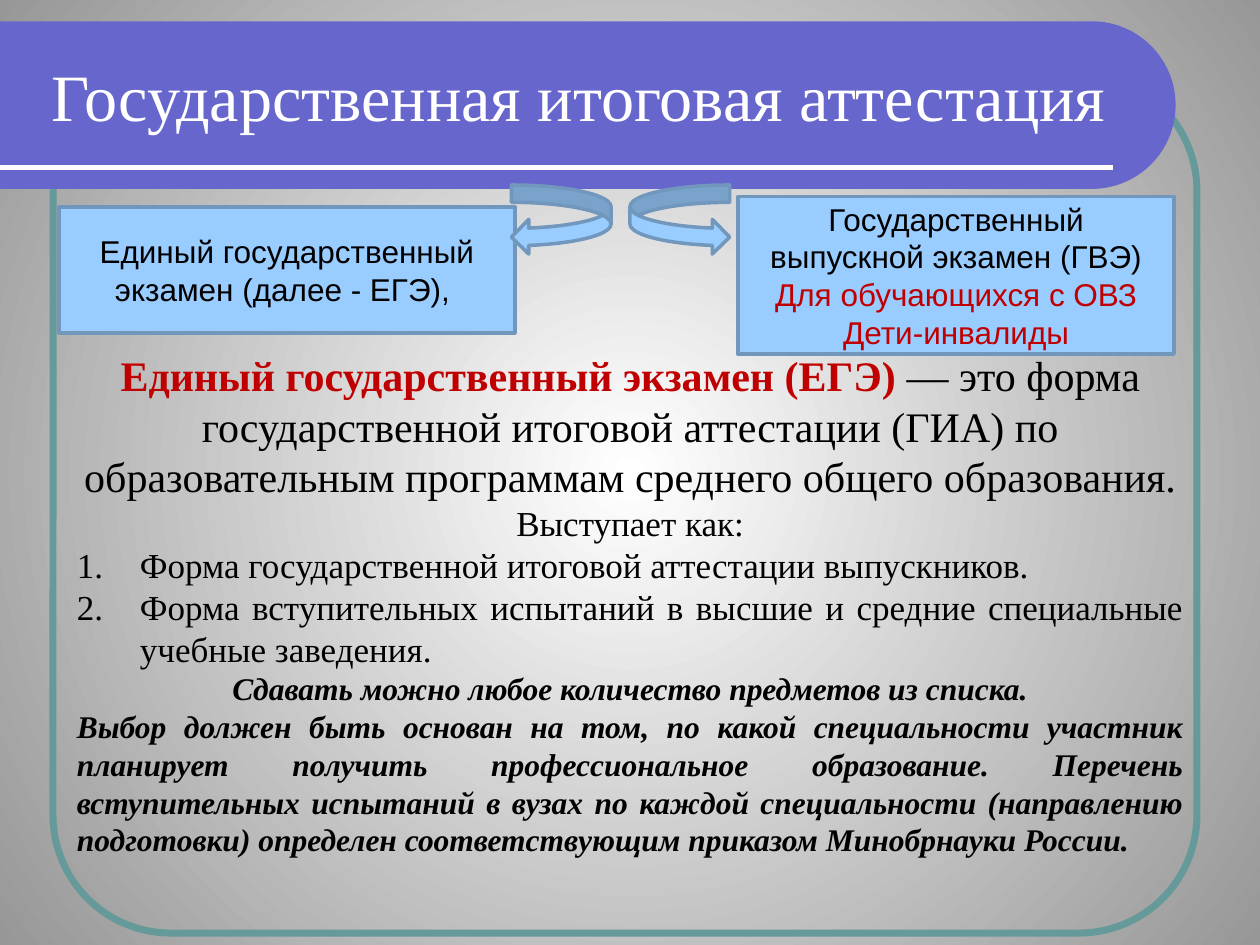
"""Builds a slide on the forms of the state final examination."""
from math import cos, pi, sin

from lxml import etree
from pptx import Presentation
from pptx.dml.color import RGBColor
from pptx.enum.shapes import MSO_CONNECTOR, MSO_SHAPE
from pptx.enum.text import MSO_ANCHOR, PP_ALIGN
from pptx.oxml import parse_xml
from pptx.oxml.ns import nsdecls, qn
from pptx.util import Cm, Pt

CENTER, JUSTIFY = PP_ALIGN.CENTER, PP_ALIGN.JUSTIFY
TOP, MIDDLE = MSO_ANCHOR.TOP, MSO_ANCHOR.MIDDLE
RECT, ROUNDED = MSO_SHAPE.RECTANGLE, MSO_SHAPE.ROUNDED_RECTANGLE
LEFT_ARROW, RIGHT_ARROW = MSO_SHAPE.CURVED_LEFT_ARROW, MSO_SHAPE.CURVED_RIGHT_ARROW
STRAIGHT = MSO_CONNECTOR.STRAIGHT

COLORS = {"white": "FFFFFF", "gray": "979797", "teal": "669999", "violet": "6666CC",
          "sky": "99CCFF", "steel": "7197BD", "red": "C00000", "black": "000000"}
SERIF, SANS = "Times New Roman", "Arial"

TITLE = [(CENTER, False, [("Государственная итоговая аттестация", 37.8, "white", "")])]
EXAMS = [
    ((1.19, 4.17, 9.19, 2.54), [
        (CENTER, False, [("Единый государственный экзамен (далее - ЕГЭ), ", 18, "black", "")])]),
    ((14.88, 3.96, 8.79, 3.18), [
        (CENTER, False, [("Государственный выпускной экзамен (ГВЭ)", 18, "black", "")]),
        (CENTER, False, [("Для обучающихся с ОВЗ", 18, "red", "")]),
        (CENTER, False, [("Дети-инвалиды", 18, "red", "")])]),
]
BODY = [
    (CENTER, False, [
        ("Единый государственный экзамен (ЕГЭ) ", 24, "red", "b"),
        ("— это форма государственной итоговой аттестации (ГИА) по образовательным "
         "программам среднего общего образования.", 24, "black", "")]),
    (CENTER, False, [("Выступает как:", 20, "black", "")]),
    (JUSTIFY, True, [
        ("Форма государственной итоговой аттестации выпускников.", 20, "black", "")]),
    (JUSTIFY, True, [
        ("Форма вступительных испытаний в высшие и средние специальные учебные заведения.",
         20, "black", "")]),
    (CENTER, False, [
        ("Сдавать можно любое количество предметов из списка.", 18, "black", "bi")]),
    (JUSTIFY, False, [
        ("Выбор должен быть основан на том, по какой специальности участник планирует "
         "получить профессиональное образование. Перечень вступительных испытаний в вузах "
         "по каждой специальности (направлению подготовки) определен соответствующим "
         "приказом Минобрнауки России.", 18, "black", "bi")]),
]
ARROWS = [(LEFT_ARROW, 10.31), (RIGHT_ARROW, 12.7)]
BAND_TOP, BAND_RIGHT, BAND_RADIUS, ARC_STEPS = 0.43, 23.7, 1.69, 60


def rgb(name):
    return RGBColor.from_string(COLORS[name])


def paint(sp, fill=None, line=None, width=0):
    sp.shadow.inherit = False
    if fill:
        sp.fill.solid()
        sp.fill.fore_color.rgb = rgb(fill)
    else:
        sp.fill.background()
    if line:
        sp.line.color.rgb = rgb(line)
        sp.line.width = Pt(width)
    else:
        sp.line.fill.background()


def add_preset(s, kind, box, *style):
    sp = s.shapes.add_shape(kind, *map(Cm, box))
    paint(sp, *style)
    return sp


def number(p):
    pPr = p._p.get_or_add_pPr()
    pPr.set("marL", str(Cm(1.27)))
    pPr.set("indent", str(-Cm(1.27)))
    etree.SubElement(pPr, qn("a:buAutoNum"), type="arabicPeriod")


def write(sp, paragraphs, font, anchor):
    tf = sp.text_frame
    tf.word_wrap = True
    tf.vertical_anchor = anchor
    for i, (align, numbered, runs) in enumerate(paragraphs):
        p = tf.add_paragraph() if i else tf.paragraphs[0]
        p.alignment = align
        if numbered:
            number(p)
        for text, size, color, style in runs:
            r = p.add_run()
            r.text = text
            r.font.name, r.font.size = font, Pt(size)
            r.font.bold, r.font.italic = "b" in style, "i" in style
            r.font.color.rgb = rgb(color)


def add_text(s, box, paragraphs, anchor):
    write(s.shapes.add_textbox(*map(Cm, box)), paragraphs, SERIF, anchor)


def set_background(s):
    stops = "".join(f'<a:gs pos="{pos}"><a:srgbClr val="{COLORS[name]}"/></a:gs>'
                    for pos, name in ((0, "white"), (100000, "gray")))
    s.background.fill.solid()
    bg_pr = s.background._cSld.bg.bgPr
    bg_pr.replace(bg_pr[0], parse_xml(
        f'<a:gradFill {nsdecls("a")} rotWithShape="1"><a:gsLst>{stops}</a:gsLst>'
        '<a:path path="circle"><a:fillToRect l="50000" t="50000" r="50000" b="50000"/>'
        '</a:path></a:gradFill>'))


def add_band(s):
    cx, cy = BAND_RIGHT - BAND_RADIUS, BAND_TOP + BAND_RADIUS
    angles = [pi * (i / ARC_STEPS - 0.5) for i in range(ARC_STEPS + 1)]
    arc = [(cx + BAND_RADIUS * cos(a), cy + BAND_RADIUS * sin(a)) for a in angles]
    points = [(Cm(x), Cm(y)) for x, y in arc + [(0, cy + BAND_RADIUS)]]
    builder = s.shapes.build_freeform(0, Cm(BAND_TOP))
    builder.add_line_segments(points, close=True)
    paint(builder.convert_to_shape(), "violet")


def add_rule(s):
    rule = s.shapes.add_connector(STRAIGHT, 0, Cm(3.38), Cm(22.43), Cm(3.38))
    rule.line.color.rgb = rgb("white")
    rule.line.width = Pt(3)
    etree.SubElement(rule._element.spPr, qn("a:effectLst"))


def main():
    prs = Presentation()
    prs.slide_width, prs.slide_height = Cm(25.4), Cm(19.05)
    s = prs.slides.add_slide(prs.slide_layouts[6])
    set_background(s)
    frame = add_preset(s, ROUNDED, (1.07, 1.47, 23.06, 17.35 - 1.47 + 1.47), None, "teal", 4)
    frame.height = Cm(17.34) - Cm(0)
    frame.adjustments[0] = 0.137
    add_band(s)
    add_rule(s)
    add_text(s, (0.53, 0.64, 22.28, 2.54), TITLE, MIDDLE)
    for box, paragraphs in EXAMS:
        write(add_preset(s, RECT, box, "sky", "steel", 2), paragraphs, SANS, MIDDLE)
    add_text(s, (1.3, 6.93, 22.81, 10.95), BODY, TOP)
    for kind, left in ARROWS:
        add_preset(s, kind, (left, 3.73, 2.01, 1.4), "sky", "steel", 2)
    prs.save("out.pptx")


if __name__ == "__main__":
    main()
